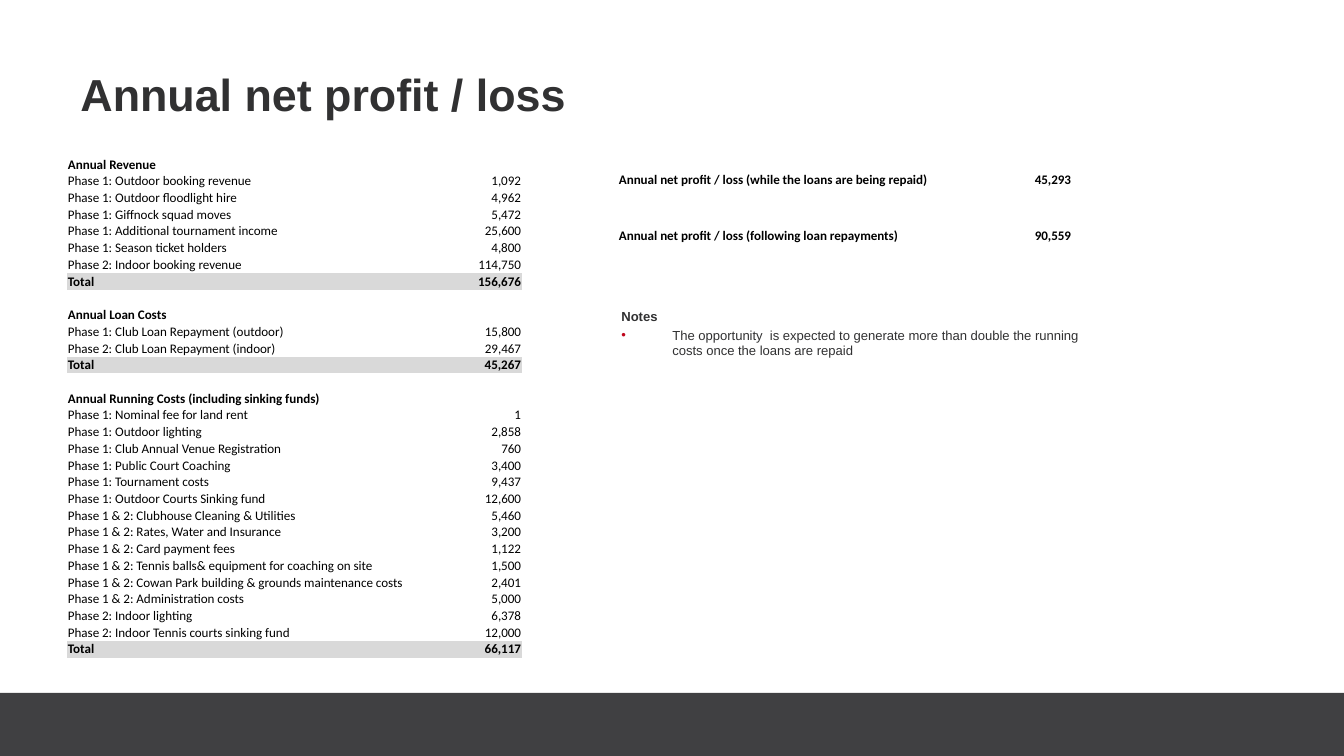
import lxml.etree
import pptx
import pptx.dml.color
import pptx.enum.shapes
import pptx.enum.text
import pptx.oxml.ns
import pptx.util

EMU_PER_PX = 914400 / 134.4
NO_STYLE_NO_GRID = "{2D5ABB26-0587-4C30-8999-92F81FD0307C}"

SECTIONS = [
    ("Annual Revenue", [
        ("Phase 1: Outdoor booking revenue", "1,092"),
        ("Phase 1: Outdoor floodlight hire", "4,962"),
        ("Phase 1: Giffnock squad moves", "5,472"),
        ("Phase 1: Additional tournament income", "25,600"),
        ("Phase 1: Season ticket holders", "4,800"),
        ("Phase 2: Indoor booking revenue", "114,750"),
    ], "156,676"),
    ("Annual Loan Costs", [
        ("Phase 1: Club Loan Repayment (outdoor)", "15,800"),
        ("Phase 2: Club Loan Repayment (indoor)", "29,467"),
    ], "45,267"),
    ("Annual Running Costs (including sinking funds)", [
        ("Phase 1: Nominal fee for land rent", "1"),
        ("Phase 1: Outdoor lighting", "2,858"),
        ("Phase 1: Club Annual Venue Registration", "760"),
        ("Phase 1: Public Court Coaching", "3,400"),
        ("Phase 1: Tournament costs", "9,437"),
        ("Phase 1: Outdoor Courts Sinking fund", "12,600"),
        ("Phase 1 & 2: Clubhouse Cleaning & Utilities", "5,460"),
        ("Phase 1 & 2: Rates, Water and Insurance", "3,200"),
        ("Phase 1 & 2: Card payment fees", "1,122"),
        ("Phase 1 & 2: Tennis balls& equipment for coaching on site", "1,500"),
        ("Phase 1 & 2: Cowan Park building & grounds maintenance costs", "2,401"),
        ("Phase 1 & 2: Administration costs", "5,000"),
        ("Phase 2: Indoor lighting", "6,378"),
        ("Phase 2: Indoor Tennis courts sinking fund", "12,000"),
    ], "66,117"),
]
NET_RESULTS = [
    ("Annual net profit / loss (while the loans are being repaid)", "45,293"),
    ("Annual net profit / loss (following loan repayments)", "90,559"),
]
NOTE = "The opportunity  is expected to generate more than double the running costs once the loans are repaid"


def px(length):
    """Turn a length in px into EMU."""
    return pptx.util.Emu(round(length * EMU_PER_PX))


def color(value):
    """Turn a hex string into a colour."""
    return pptx.dml.color.RGBColor.from_string(value)


def write_text(paragraph, text, size=7, font="Arial", fill="313132", bold=False, align="LEFT"):
    """Write formatted text into a paragraph, or size the paragraph when it is empty."""
    paragraph.alignment = getattr(pptx.enum.text.PP_ALIGN, align)
    if not text:
        tag = pptx.oxml.ns.qn("a:endParaRPr")
        lxml.etree.SubElement(paragraph._p, tag, sz=str(size * 100))
        return
    run = paragraph.add_run()
    run.text = text
    run.font.size = pptx.util.Pt(size)
    run.font.name = font
    run.font.bold = bold
    run.font.color.rgb = color(fill)


def set_bullet(paragraph, indent, character=None, fill=None):
    """Give a paragraph a hanging bullet, or none without a character."""
    properties = paragraph._p.get_or_add_pPr()
    properties.set("marL", str(px(indent)))
    properties.set("indent", str(-px(indent)))
    qn = pptx.oxml.ns.qn
    if character is None:
        lxml.etree.SubElement(properties, qn("a:buNone"))
        return
    bullet_color = lxml.etree.SubElement(properties, qn("a:buClr"))
    lxml.etree.SubElement(bullet_color, qn("a:srgbClr"), val=fill)
    lxml.etree.SubElement(properties, qn("a:buChar"), char=character)


def place(shape, box):
    """Move and size a shape to a box in px."""
    shape.left, shape.top, shape.width, shape.height = map(px, box)


def add_footer_band(slide, box):
    """Add the dark band at the foot of the slide."""
    band = slide.shapes.add_shape(pptx.enum.shapes.MSO_SHAPE.RECTANGLE, *map(px, box))
    band.shadow.inherit = False
    band.fill.solid()
    band.fill.fore_color.rgb = color("404042")
    band.line.fill.background()


def fill_title(slide, box, text):
    """Place and write the title."""
    title = slide.shapes.title
    place(title, box)
    title.text_frame.auto_size = pptx.enum.text.MSO_AUTO_SIZE.NONE
    title.text_frame.vertical_anchor = pptx.enum.text.MSO_ANCHOR.MIDDLE
    write_text(title.text_frame.paragraphs[0], text, size=24, bold=True)


def fill_notes(slide, box):
    """Place the body and write the notes heading and its bullet."""
    body = slide.placeholders[1]
    place(body, box)
    frame = body.text_frame
    frame.auto_size = pptx.enum.text.MSO_AUTO_SIZE.NONE
    heading = frame.paragraphs[0]
    set_bullet(heading, 0)
    heading.space_before = pptx.util.Pt(0)
    write_text(heading, "Notes", bold=True)
    note = frame.add_paragraph()
    set_bullet(note, 51, "•", "BF061C")
    write_text(note, NOTE)


def add_money_table(slide, box, rows, amount_width, row_heights):
    """Add a table of (label, amount, bold, shaded) rows."""
    frame = slide.shapes.add_table(len(rows), 2, *map(px, box))
    table = frame.table
    table.first_row = table.horz_banding = False
    table._tbl.tblPr.find(pptx.oxml.ns.qn("a:tableStyleId")).text = NO_STYLE_NO_GRID
    table.columns[0].width = px(box[2] - amount_width)
    table.columns[1].width = px(amount_width)
    for row, height, (label, amount, bold, shaded) in zip(table.rows, row_heights, rows):
        row.height = px(height)
        for cell, text, align in zip(row.cells, (label, amount), ("LEFT", "RIGHT")):
            cell.margin_left = cell.margin_right = px(1)
            cell.margin_top = cell.margin_bottom = 0
            cell.vertical_anchor = pptx.enum.text.MSO_ANCHOR.BOTTOM
            if shaded:
                cell.fill.solid()
                cell.fill.fore_color.rgb = color("D9D9D9")
            else:
                cell.fill.background()
            write_text(cell.text_frame.paragraphs[0], text, font="Calibri",
                       fill="000000", bold=bold, align=align)


def add_accounts(slide, box):
    """Add the revenue and cost sections with their totals."""
    rows = []
    for heading, items, total in SECTIONS:
        if rows:
            rows.append(("", "", False, False))
        rows.append((heading, "", True, False))
        rows.extend((label, amount, False, False) for label, amount in items)
        rows.append(("Total", total, True, True))
    add_money_table(slide, box, rows, 75, [box[3] / len(rows)] * len(rows))


def add_net_results(slide, box):
    """Add the two net results with an empty row between them."""
    first, second = [(label, amount, True, False) for label, amount in NET_RESULTS]
    rows = [first, ("", "", False, False), second]
    add_money_table(slide, box, rows, 59, [32, 28, 28])


def main():
    """Build the slide and save it."""
    presentation = pptx.Presentation()
    presentation.slide_width, presentation.slide_height = px(1344), px(756)
    slide = presentation.slides.add_slide(presentation.slide_layouts[1])
    add_footer_band(slide, (0, 693, 1344, 63))
    fill_title(slide, (67, 31, 1210, 126), "Annual net profit / loss")
    add_accounts(slide, (67, 156, 455, 502))
    fill_notes(slide, (608, 302, 491, 152))
    add_net_results(slide, (618, 156, 454, 88))
    presentation.save("out.pptx")


if __name__ == "__main__":
    main()
